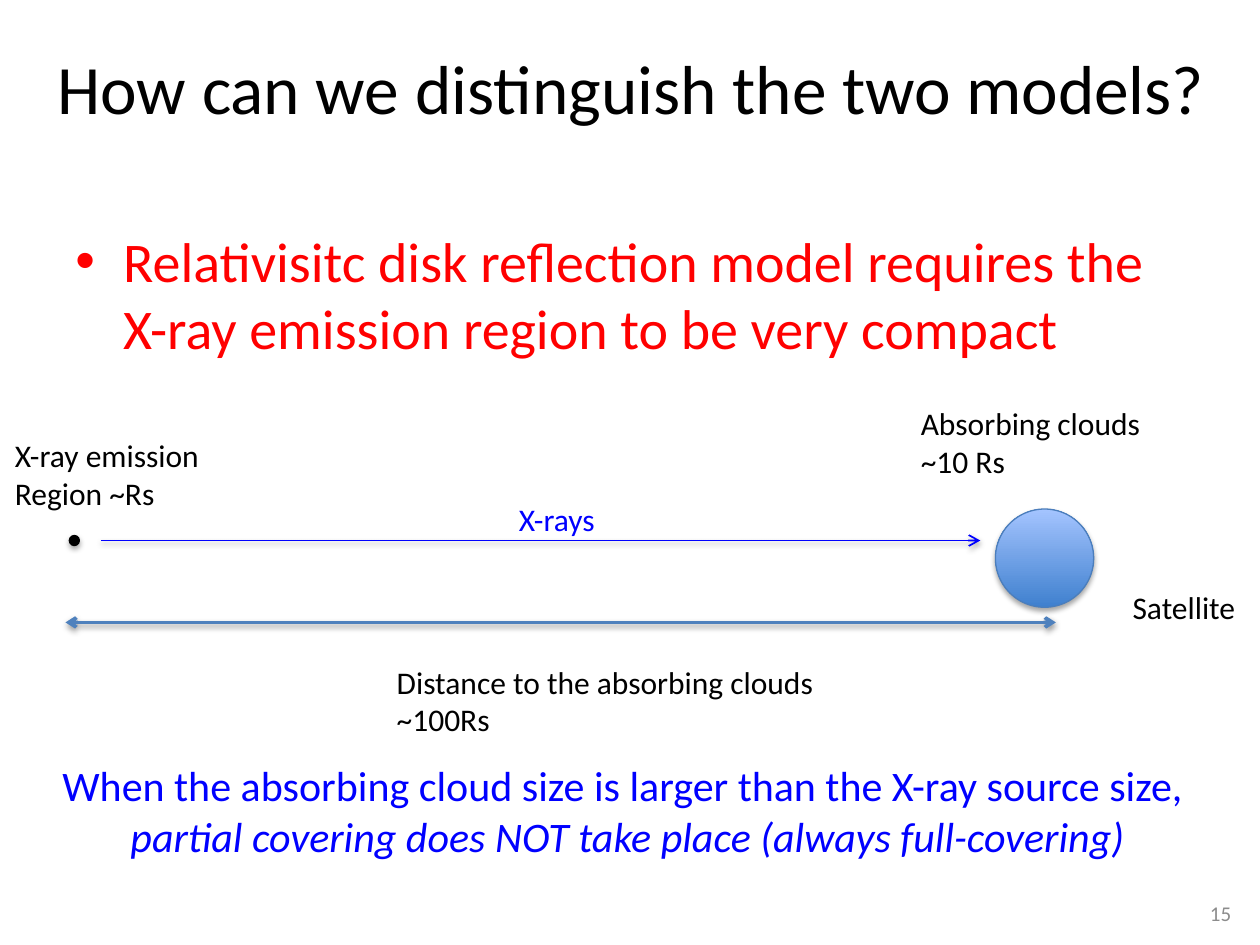
from typing import NamedTuple, Optional

from lxml.etree import SubElement
from pptx import Presentation
from pptx.dml.color import RGBColor
from pptx.enum.shapes import MSO_CONNECTOR, MSO_SHAPE
from pptx.enum.text import MSO_ANCHOR, PP_ALIGN
from pptx.oxml.ns import qn
from pptx.util import Inches, Pt

BLACK = RGBColor(0x00, 0x00, 0x00)
RED = RGBColor(0xFF, 0x00, 0x00)
BLUE = RGBColor(0x00, 0x00, 0xFF)
GRAY = RGBColor(0x8C, 0x8C, 0x8C)
STEEL = RGBColor(0x4F, 0x81, 0xBD)
CLOUD_EDGE = RGBColor(0x4B, 0x7E, 0xBC)
CLOUD_DARK = RGBColor(0x3F, 0x80, 0xCE)
CLOUD_LIGHT = RGBColor(0xA4, 0xC4, 0xFF)
FONT = "Calibri"


class Label(NamedTuple):
    text: str
    left: float
    top: float
    width: float
    height: float
    size: float = 18
    color: RGBColor = BLACK
    align: PP_ALIGN = PP_ALIGN.LEFT
    anchor: MSO_ANCHOR = MSO_ANCHOR.TOP
    wrap: bool = False


class Arrow(NamedTuple):
    start: float
    end: float
    y: float
    color: RGBColor
    weight: float
    double: bool = False


class Disc(NamedTuple):
    left: float
    top: float
    diameter: float
    edge: RGBColor
    fill: Optional[RGBColor] = None  # None gives the cloud gradient


BULLET = Label(
    "Relativisitc disk reflection model requires the X-ray emission region to be very compact",
    0.5, 1.75, 9, 1.18, 32, RED, wrap=True)
CONCLUSION = Label(
    "When the absorbing cloud size is larger than the X-ray source size, \n"
    "partial covering does NOT take place (always full-covering)",
    0.36, 5.98, 9.24, 0.91, 24, BLUE, PP_ALIGN.CENTER)
PAGE_NUMBER = Label("15", 7.54, 7.05, 2.33, 0.4, 12, GRAY, PP_ALIGN.RIGHT,
                    MSO_ANCHOR.MIDDLE, True)
DIAGRAM_LABELS = [
    Label("Absorbing clouds\n~10 Rs", 7.21, 3.16, 1.96, 0.71),
    Label("Distance to the absorbing clouds\n~100Rs", 3.05, 5.21, 3.55, 0.71),
    Label("X-ray emission\nRegion ~Rs", 0.02, 3.41, 1.7, 0.71),
    Label("X-rays", 4.02, 3.92, 0.83, 0.4, color=BLUE),
    Label("Satellite", 8.89, 4.62, 1.03, 0.4),
]
ARROWS = [
    Arrow(0.52, 8.38, 4.94, STEEL, 2, double=True),
    Arrow(0.8, 7.78, 4.29, BLUE, 1),
]
DISCS = [
    Disc(0.55, 4.25, 0.08, BLACK, BLACK),
    Disc(7.9, 4.04, 0.78, CLOUD_EDGE),
]


def style_text(frame, size: float, color: RGBColor, align: PP_ALIGN) -> None:
    for paragraph in frame.paragraphs:
        paragraph.alignment = align
        for run in paragraph.runs:
            run.font.name = FONT
            run.font.size = Pt(size)
            run.font.color.rgb = color


def add_label(slide, label: Label):
    box = slide.shapes.add_textbox(Inches(label.left), Inches(label.top),
                                   Inches(label.width), Inches(label.height))
    frame = box.text_frame
    frame.word_wrap = label.wrap
    frame.vertical_anchor = label.anchor
    frame.text = label.text
    style_text(frame, label.size, label.color, label.align)
    return frame


def add_bullet(paragraph, indent: float) -> None:
    properties = paragraph._p.get_or_add_pPr()
    properties.set("marL", str(Inches(indent)))
    properties.set("indent", str(-Inches(indent)))
    SubElement(properties, qn("a:buFont"), typeface="Arial")
    SubElement(properties, qn("a:buChar"), char="•")


def add_shadow(shape, distance: float, opacity: int) -> None:
    """Drop a soft black shadow straight down."""
    properties = shape._element.spPr
    effects = properties.find(qn("a:effectLst"))
    if effects is None:
        effects = SubElement(properties, qn("a:effectLst"))
    shadow = SubElement(effects, qn("a:outerShdw"), blurRad=str(Pt(3.1)),
                        dist=str(Pt(distance)), dir="5400000", rotWithShape="0")
    color = SubElement(shadow, qn("a:srgbClr"), val=str(BLACK))
    SubElement(color, qn("a:alpha"), val=str(opacity * 1000))


def add_disc(slide, disc: Disc) -> None:
    shape = slide.shapes.add_shape(
        MSO_SHAPE.OVAL, Inches(disc.left), Inches(disc.top),
        Inches(disc.diameter), Inches(disc.diameter))
    if disc.fill is None:
        shape.fill.gradient()
        shape.fill.gradient_angle = 90
        for stop, color in zip(shape.fill.gradient_stops, (CLOUD_DARK, CLOUD_LIGHT)):
            stop.color.rgb = color
    else:
        shape.fill.solid()
        shape.fill.fore_color.rgb = disc.fill
    shape.line.color.rgb = disc.edge
    shape.line.width = Pt(0.75)
    shape.shadow.inherit = False
    add_shadow(shape, 1.8, 35)


def add_arrow(slide, arrow: Arrow) -> None:
    connector = slide.shapes.add_connector(
        MSO_CONNECTOR.STRAIGHT, Inches(arrow.start), Inches(arrow.y),
        Inches(arrow.end), Inches(arrow.y))
    connector.line.color.rgb = arrow.color
    connector.line.width = Pt(arrow.weight)
    line = connector.line._get_or_add_ln()
    for end in ("a:headEnd", "a:tailEnd") if arrow.double else ("a:tailEnd",):
        SubElement(line, qn(end), type="arrow")
    add_shadow(connector, 1.6, 38)


def main() -> None:
    presentation = Presentation()
    presentation.slide_width = Inches(10)
    presentation.slide_height = Inches(7.5)
    slide = presentation.slides.add_slide(presentation.slide_layouts[5])

    title = slide.shapes.title
    title.left, title.top = Inches(0.15), Inches(0.43)
    title.width, title.height = Inches(9.72), Inches(1.25)
    title.text_frame.text = "How can we distinguish the two models?\v"
    title.text_frame.vertical_anchor = MSO_ANCHOR.MIDDLE
    style_text(title.text_frame, 39.6, BLACK, PP_ALIGN.CENTER)

    requirement = add_label(slide, BULLET)
    add_bullet(requirement.paragraphs[0], 0.38)
    add_label(slide, PAGE_NUMBER)
    conclusion = add_label(slide, CONCLUSION)
    conclusion.paragraphs[1].runs[0].font.italic = True

    for arrow in ARROWS:
        add_arrow(slide, arrow)
    for disc in DISCS:
        add_disc(slide, disc)
    for label in DIAGRAM_LABELS:
        add_label(slide, label)

    presentation.save("out.pptx")


if __name__ == "__main__":
    main()
